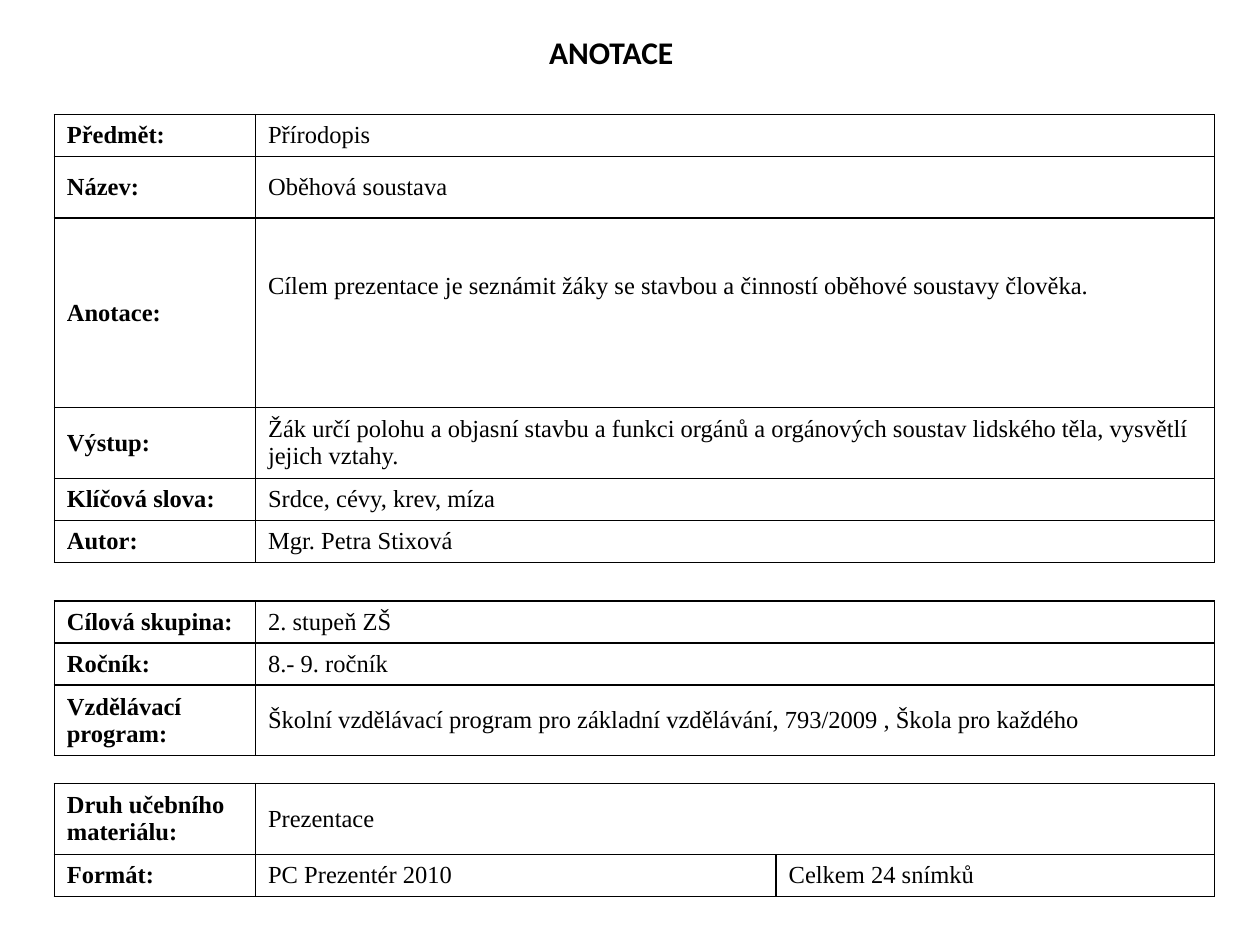
from lxml import etree
from pptx import Presentation
from pptx.dml.color import RGBColor
from pptx.enum.text import MSO_ANCHOR, PP_ALIGN
from pptx.oxml.ns import qn
from pptx.util import Pt

BLACK = RGBColor(0x00, 0x00, 0x00)
MIDDLE = MSO_ANCHOR.MIDDLE
CENTER = PP_ALIGN.CENTER
TITLE_ONLY = 5

TITLE_BOX = (247, 15, 204.5, 29)
TABLE_BOX = (31, 65.5, 663, 447)
COLUMN_WIDTHS = (115, 297.5, 250.5)

# Row height, then the label and its values; a row without texts is a gap.
ROWS = [
    (24, "Předmět:", "Přírodopis"),
    (35, "Název:", "Oběhová soustava"),
    (108.5, "Anotace:", "Cílem prezentace je seznámit žáky se stavbou a činností "
                        "oběhové soustavy člověka."),
    (40.5, "Výstup:", "Žák určí polohu a objasní stavbu a funkci orgánů a orgánových "
                      "soustav lidského těla, vysvětlí jejich vztahy."),
    (24, "Klíčová slova:", "Srdce, cévy, krev, míza"),
    (24, "Autor:", "Mgr. Petra Stixová"),
    (22,),
    (24, "Cílová skupina:", "2. stupeň ZŠ"),
    (24, "Ročník:", "8.- 9. ročník"),
    (40.5, "Vzdělávací program:", "Školní vzdělávací program pro základní vzdělávání, "
                                  "793/2009 , Škola pro každého"),
    (16,),
    (40.5, "Druh učebního materiálu:", "Prezentace"),
    (24, "Formát:", "PC Prezentér 2010", "Celkem 24 snímků"),
]
ANNOTATION_ROW = 2
ANNOTATION_BOTTOM_MARGIN = 34.5


def set_borders(cell, visible_sides):
    properties = cell._tc.get_or_add_tcPr()
    for position, side in enumerate("LRTB"):
        line = etree.Element(qn(f"a:ln{side}"), w=str(Pt(1)))
        if side in visible_sides:
            fill = etree.SubElement(line, qn("a:solidFill"))
            etree.SubElement(fill, qn("a:srgbClr"), val=str(BLACK))
        else:
            etree.SubElement(line, qn("a:noFill"))
        properties.insert(position, line)


def write_cell(cell, text, bold):
    cell.text = text
    cell.vertical_anchor = MIDDLE
    font = cell.text_frame.paragraphs[0].font
    font.name = "Times New Roman"
    font.size = Pt(14)
    font.bold = bold
    font.color.rgb = BLACK


def shrink_gap_cell(cell):
    """Keep the empty line from stretching a low row."""
    cell.margin_top = cell.margin_bottom = 0
    para = cell.text_frame.paragraphs[0]
    etree.SubElement(para._p, qn("a:endParaRPr"), sz="800")


def add_title(page, box):
    title = page.shapes.title
    title.left, title.top, title.width, title.height = map(Pt, box)
    frame = title.text_frame
    frame.text = "ANOTACE"
    frame.vertical_anchor = MIDDLE
    para = frame.paragraphs[0]
    para.alignment = CENTER
    para.font.name = "Calibri"
    para.font.size = Pt(18)
    para.font.bold = True
    para.font.color.rgb = BLACK


def add_annotation_table(page, box):
    table = page.shapes.add_table(len(ROWS), len(COLUMN_WIDTHS), *map(Pt, box)).table
    table.first_row = table.horz_banding = False
    for column, width in zip(table.columns, COLUMN_WIDTHS):
        column.width = Pt(width)

    for row_index, (height, *texts) in enumerate(ROWS):
        table.rows[row_index].height = Pt(height)
        for cell in table.rows[row_index].cells:
            cell.fill.background()
            set_borders(cell, "LRTB" if texts else "TB")
            if not texts:
                shrink_gap_cell(cell)
        if len(texts) < len(COLUMN_WIDTHS):
            table.cell(row_index, 1).merge(table.cell(row_index, 2))
        for column_index, text in enumerate(texts):
            write_cell(table.cell(row_index, column_index), text, column_index == 0)

    table.cell(ANNOTATION_ROW, 1).margin_bottom = Pt(ANNOTATION_BOTTOM_MARGIN)


def main():
    deck = Presentation()
    deck.slide_width, deck.slide_height = Pt(720), Pt(540)
    page = deck.slides.add_slide(deck.slide_layouts[TITLE_ONLY])
    add_title(page, TITLE_BOX)
    add_annotation_table(page, TABLE_BOX)
    deck.save("out.pptx")


if __name__ == "__main__":
    main()
